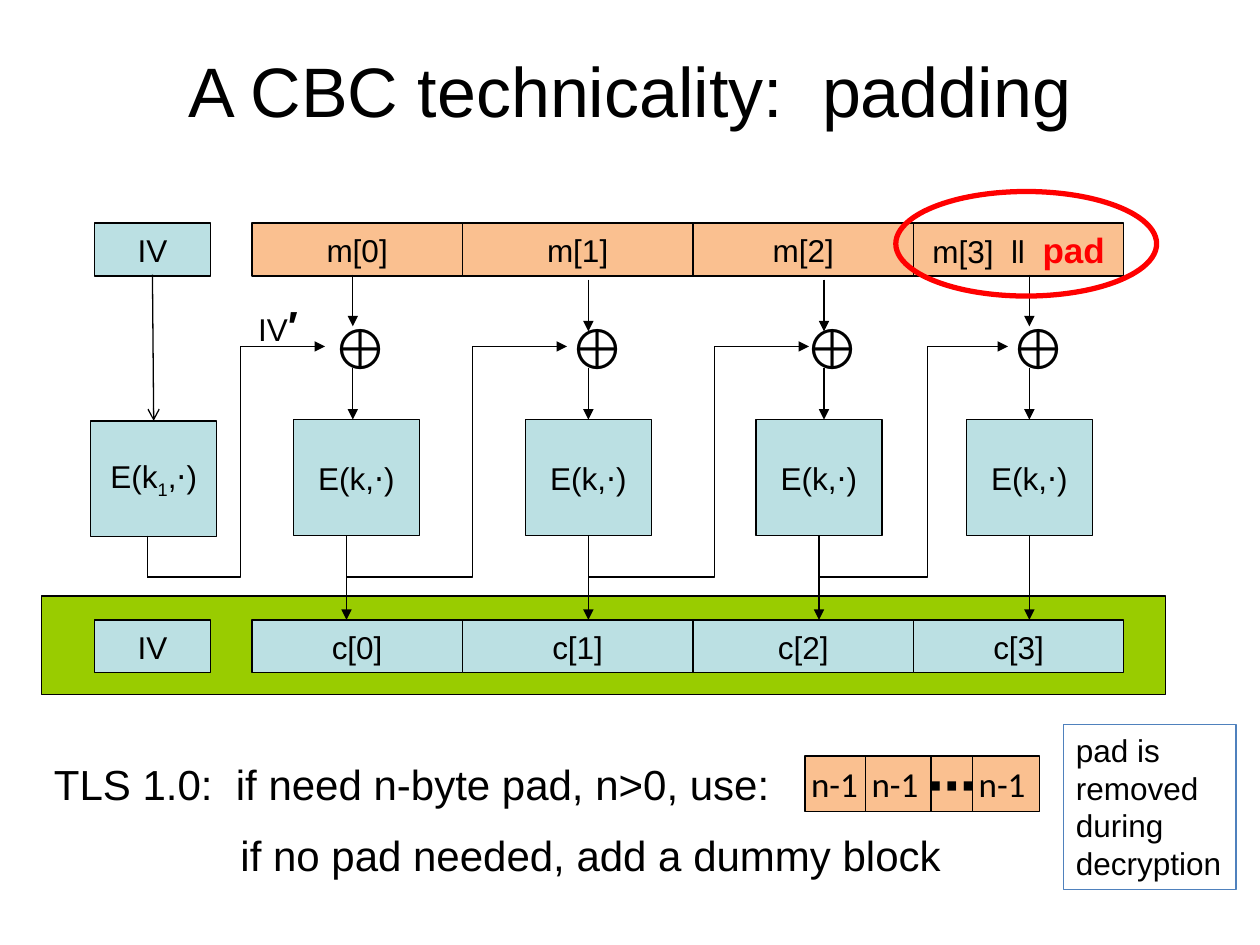
from typing import NamedTuple, Optional

from lxml import etree
from pptx import Presentation
from pptx.dml.color import RGBColor
from pptx.enum import shapes, text
from pptx.oxml import ns
from pptx.util import Inches, Pt

BLACK, RED, BLUE = "000000", "FF0000", "4F81BD"
ORANGE, TEAL, GREEN = "FAC090", "BBE0E3", "99CC00"
RECT, OVAL = shapes.MSO_SHAPE.RECTANGLE, shapes.MSO_SHAPE.OVAL
LEFT, CENTER = text.PP_ALIGN.LEFT, text.PP_ALIGN.CENTER
TOP, MIDDLE = text.MSO_ANCHOR.TOP, text.MSO_ANCHOR.MIDDLE

MESSAGE_TOP, XOR_Y, CIPHER_TOP, OUTPUT_TOP = 1.77, 2.75, 3.33, 4.92
BLOCK_HEIGHT, CIPHER_HEIGHT, BRANCH_Y = 0.42, 0.92, 4.58
CIPHER_BOTTOM = CIPHER_TOP + CIPHER_HEIGHT


class Run(NamedTuple):
    text: str
    size: Optional[float] = None
    color: Optional[str] = None
    bold: bool = False
    baseline: int = 0


class Stage(NamedTuple):
    """One block of the chain, with the x positions of its parts."""
    left: float
    width: float
    message: list
    cipher_left: float
    xor_left: float
    arrow_x: float
    arrow_top: float
    output_x: float


class Feedback(NamedTuple):
    """An elbow arrow from below one cipher to the next XOR."""
    start: float
    turn: float
    end: float


STAGES = [
    Stage(2, 1.67, ["m[0]"], 2.33, 2.54, 2.8, 2.18, 2.75),
    Stage(3.67, 1.83, ["m[1]"], 4.17, 4.42, 4.67, 2.22, 4.67),
    Stage(5.5, 1.75, ["m[2]"], 6, 6.29, 6.54, 2.22, 6.5),
    Stage(7.25, 1.67, [[Run("m[3]  ll  "), Run("pad", 20, RED, True)]],
          7.67, 7.92, 8.17, 2.18, 8.17),
]
FEEDBACKS = [
    Feedback(1.17, 1.91, 2.58),
    Feedback(2.75, 3.75, 4.5),
    Feedback(4.67, 5.67, 6.42),
    Feedback(6.5, 7.36, 8),
]

prs = Presentation()
prs.slide_width, prs.slide_height = Inches(10), Inches(7.5)
slide = prs.slides.add_slide(prs.slide_layouts[6])


def rgb(value: str) -> RGBColor:
    return RGBColor.from_string(value)


def write(shape, paragraphs: list, *, size: float = 18, font: str = "Arial",
          bold: bool = False, align=CENTER, anchor=MIDDLE, wrap: bool = False,
          space_before: float = 0) -> None:
    """Fill a shape with paragraphs, each a string or a list of runs."""
    frame = shape.text_frame
    frame.word_wrap, frame.vertical_anchor = wrap, anchor
    for number, content in enumerate(paragraphs):
        paragraph = frame.add_paragraph() if number else frame.paragraphs[0]
        paragraph.alignment = align
        if number:
            paragraph.space_before = Pt(space_before)
        for part in [Run(content)] if isinstance(content, str) else content:
            run = paragraph.add_run()
            run.text = part.text
            run.font.name, run.font.size = font, Pt(part.size or size)
            run.font.bold = bold or part.bold
            run.font.color.rgb = rgb(part.color or BLACK)
            if part.baseline:
                run._r.get_or_add_rPr().set("baseline", str(part.baseline))


def add_label(left: float, top: float, width: float, height: float,
              paragraphs: list, **style):
    label = slide.shapes.add_textbox(*map(Inches, (left, top, width, height)))
    write(label, paragraphs, **{"align": LEFT, "anchor": TOP, **style})
    return label


def add_box(left: float, top: float, width: float, height: float,
            paragraphs: Optional[list] = None, *, kind=RECT,
            fill: Optional[str] = TEAL, line: str = BLACK,
            weight: float = 0.75, **style) -> None:
    box = slide.shapes.add_shape(kind, *map(Inches, (left, top, width, height)))
    box.shadow.inherit = False
    if fill:
        box.fill.solid()
        box.fill.fore_color.rgb = rgb(fill)
    else:
        box.fill.background()
    box.line.color.rgb, box.line.width = rgb(line), Pt(weight)
    if paragraphs:
        write(box, paragraphs, **style)


def style_arrow(arrow, head: str) -> None:
    arrow.line.color.rgb, arrow.line.width = rgb(BLACK), Pt(0.75)
    etree.SubElement(arrow.line._get_or_add_ln(), ns.qn("a:tailEnd"), type=head)


def add_arrow(x1: float, y1: float, x2: float, y2: float,
              head: str = "triangle") -> None:
    arrow = slide.shapes.add_connector(
        shapes.MSO_CONNECTOR.STRAIGHT, *map(Inches, (x1, y1, x2, y2)))
    style_arrow(arrow, head)
    etree.SubElement(arrow._element.spPr, ns.qn("a:effectLst"))


def add_feedback(route: Feedback) -> None:
    builder = slide.shapes.build_freeform(Inches(route.start), Inches(BRANCH_Y))
    corners = [(route.turn, BRANCH_Y), (route.turn, XOR_Y), (route.end, XOR_Y)]
    builder.add_line_segments(
        [(Inches(x), Inches(y)) for x, y in corners], close=False)
    elbow = builder.convert_to_shape()
    elbow.shadow.inherit = False
    elbow.fill.background()
    style_arrow(elbow, "triangle")


def add_stage(index: int, stage: Stage) -> None:
    x = stage.arrow_x
    add_box(stage.left, MESSAGE_TOP, stage.width, BLOCK_HEIGHT, stage.message,
            fill=ORANGE)
    add_box(stage.cipher_left, CIPHER_TOP, 1, CIPHER_HEIGHT, ["E(k,⋅)"])
    add_box(stage.left, OUTPUT_TOP, stage.width, BLOCK_HEIGHT, [f"c[{index}]"])
    add_label(stage.xor_left, 2.44, 0.55, 0.64, ["⊕"], size=32)
    add_arrow(x, stage.arrow_top, x, stage.arrow_top + 0.41)
    add_arrow(x, 2.92, x, CIPHER_TOP)
    add_arrow(stage.output_x, CIPHER_BOTTOM, stage.output_x, OUTPUT_TOP)


add_label(0.5, 0.25, 9, 0.92, ["A CBC technicality:  padding"], size=40,
          align=CENTER, anchor=MIDDLE, wrap=True)

# Encryption chain
add_box(0.33, 4.73, 8.92, 0.78, fill=GREEN)
for index, stage in enumerate(STAGES):
    add_stage(index, stage)

# Initialisation vector
for top in (MESSAGE_TOP, OUTPUT_TOP):
    add_box(0.75, top, 0.92, BLOCK_HEIGHT, ["IV"])
add_box(0.72, CIPHER_TOP + 0.01, 1, CIPHER_HEIGHT,
        [[Run("E(k"), Run("1", baseline=-25000), Run(",⋅)")]])
add_arrow(1.21, 2.18, 1.22, 3.34, head="arrow")
add_arrow(1.17, CIPHER_BOTTOM, 1.17, BRANCH_Y, head="none")
add_label(1.95, 2.33, 0.52, 0.5, [[Run("IV"), Run("′", 24, bold=True)]])
for route in FEEDBACKS:
    add_feedback(route)

# Padding rule
rule = add_label(0.33, 5.97, 7.49, 1.08,
                 ["TLS 1.0:  if need n-byte pad, n>0, use:",
                  "if no pad needed, add a dummy block"],
                 size=24, wrap=True, space_before=12)
dummy_block = rule.text_frame.paragraphs[1]._p.get_or_add_pPr()
dummy_block.set("marL", str(Inches(1.48)))
dummy_block.set("indent", "0")

for left, width, value, size in [(6.39, 0.53, "n-1 ", 20), (6.87, 0.53, "n-1 ", 20),
                                 (7.39, 0.33, "⋯", 28), (7.72, 0.53, "n-1 ", 20)]:
    add_box(left, 6, width, 0.44, [value], fill=ORANGE, font="Calibri",
            size=size, bold=value == "⋯")

add_box(8.44, 5.75, 1.37, 1.31, ["pad is", "removed", "during", "decryption"],
        fill=None, line=BLUE, align=LEFT, anchor=TOP)
add_box(7.11, 1.52, 2.07, 0.83, kind=OVAL, fill=None, line=RED, weight=3)

prs.save("out.pptx")
